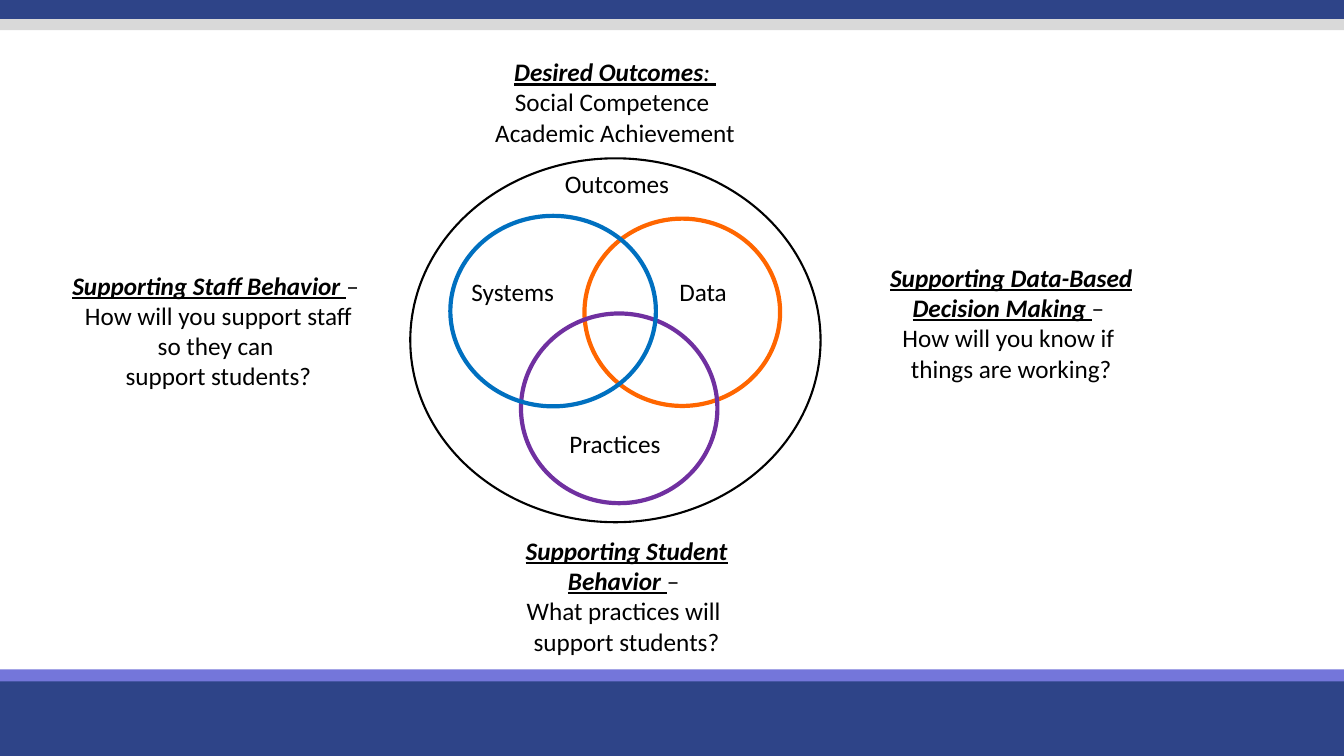
from pptx import Presentation
from pptx.dml.color import RGBColor
from pptx.enum.shapes import MSO_SHAPE as Shape
from pptx.enum.text import PP_ALIGN as Align
from pptx.util import Cm, Pt

BLACK = RGBColor(0x00, 0x00, 0x00)
NAVY = RGBColor(0x2E, 0x44, 0x88)
LAVENDER = RGBColor(0x74, 0x76, 0xDA)
GREY = RGBColor(0xD9, 0xD9, 0xD9)
ORANGE = RGBColor(0xFF, 0x66, 0x00)
PURPLE = RGBColor(0x70, 0x30, 0xA0)
BLUE = RGBColor(0x00, 0x70, 0xC0)

WIDTH, HEIGHT = 33.87, 19.05


class SlideBuilder:
    font_name = "Calibri"
    font_size = Pt(18)

    def __init__(self, slide):
        self.shapes = slide.shapes

    def band(self, top, height, color):
        shape = self.shapes.add_shape(Shape.RECTANGLE, 0, Cm(top), Cm(WIDTH), Cm(height))
        shape.shadow.inherit = False
        shape.fill.solid()
        shape.fill.fore_color.rgb = color
        shape.line.fill.background()

    def ring(self, box, color, weight=3):
        shape = self.shapes.add_shape(Shape.OVAL, *map(Cm, box))
        shape.shadow.inherit = False
        shape.fill.background()
        shape.line.color.rgb = color
        shape.line.width = Pt(weight)

    def style(self, paragraph, align):
        paragraph.alignment = align
        paragraph.font.name = self.font_name
        paragraph.font.size = self.font_size
        paragraph.font.color.rgb = BLACK

    def text_frame(self, box):
        frame = self.shapes.add_textbox(*map(Cm, box)).text_frame
        frame.word_wrap = True
        return frame

    def label(self, box, text, align=Align.LEFT):
        paragraph = self.text_frame(box).paragraphs[0]
        paragraph.text = text
        self.style(paragraph, align)

    def callout(self, box, heading, mark, lines, slanted_mark=False):
        """Centred text under an underlined heading that ends with a lighter mark."""
        frame = self.text_frame(box)
        title = frame.paragraphs[0]
        for text, bold, slanted in ((heading, True, True), (mark, False, slanted_mark)):
            run = title.add_run()
            run.text = text
            run.font.bold = bold
            run.font.italic = run.font.underline = slanted
        for line in lines:
            frame.add_paragraph().text = line
        for paragraph in frame.paragraphs:
            self.style(paragraph, Align.CENTER)


def main():
    presentation = Presentation()
    presentation.slide_width, presentation.slide_height = Cm(WIDTH), Cm(HEIGHT)
    builder = SlideBuilder(presentation.slides.add_slide(presentation.slide_layouts[6]))

    for top, height, color in (
        (17.02, 2.03, NAVY),
        (16.87, 0.3, LAVENDER),
        (0, 0.48, NAVY),
        (0.48, 0.28, GREY),
    ):
        builder.band(top, height, color)

    builder.callout((7.92, 1.3, 15.16, 2.82), "Desired Outcomes", ": ",
                    ["Social Competence ", "Academic Achievement"], slanted_mark=True)
    builder.callout((21.23, 6.48, 8.51, 3.33), "Supporting Data-Based Decision Making ", "– ",
                    ["How will you know if ", "things are working?"])
    builder.callout((1.57, 6.68, 7.87, 3.76), "Supporting Staff Behavior ", "– ",
                    ["How will you support staff so they can ", "support students?"])
    builder.callout((11.79, 13.36, 8, 3.33), "Supporting Student Behavior ", "– ",
                    ["What practices will ", "support students?"])

    builder.ring((14.73, 5.51, 4.93, 4.72), ORANGE)
    builder.ring((13.13, 7.9, 4.95, 4.78), PURPLE)
    builder.ring((11.35, 5.44, 5.18, 4.8), BLUE)
    builder.label((11.63, 6.83, 2.74, 0.79), "Systems")
    builder.label((16.87, 6.83, 1.88, 1.02), "Data")
    builder.label((14.1, 10.67, 3.4, 1.02), "Practices")
    builder.label((12.19, 4.11, 6.86, 0.79), "Outcomes ", Align.CENTER)
    builder.ring((10.34, 3.99, 10.34, 9.17), BLACK, weight=1.5)

    presentation.save("out.pptx")


if __name__ == "__main__":
    main()
